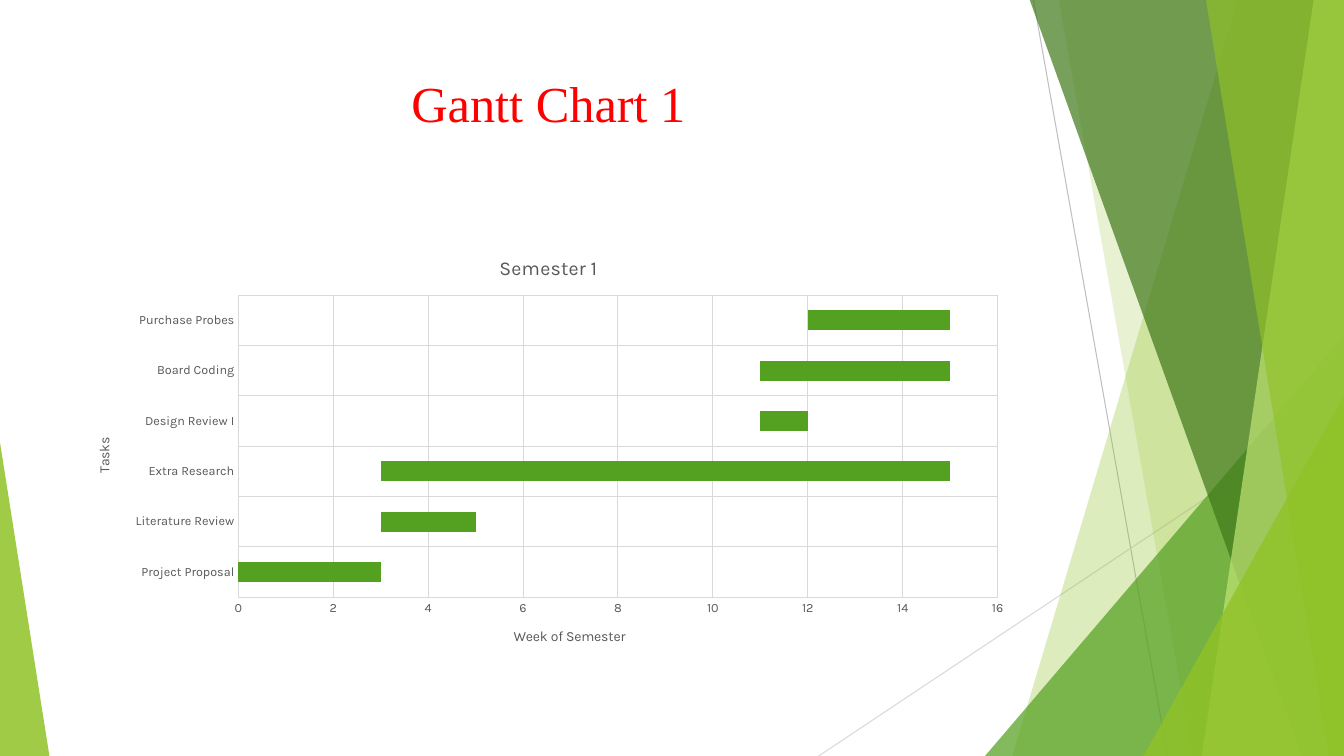
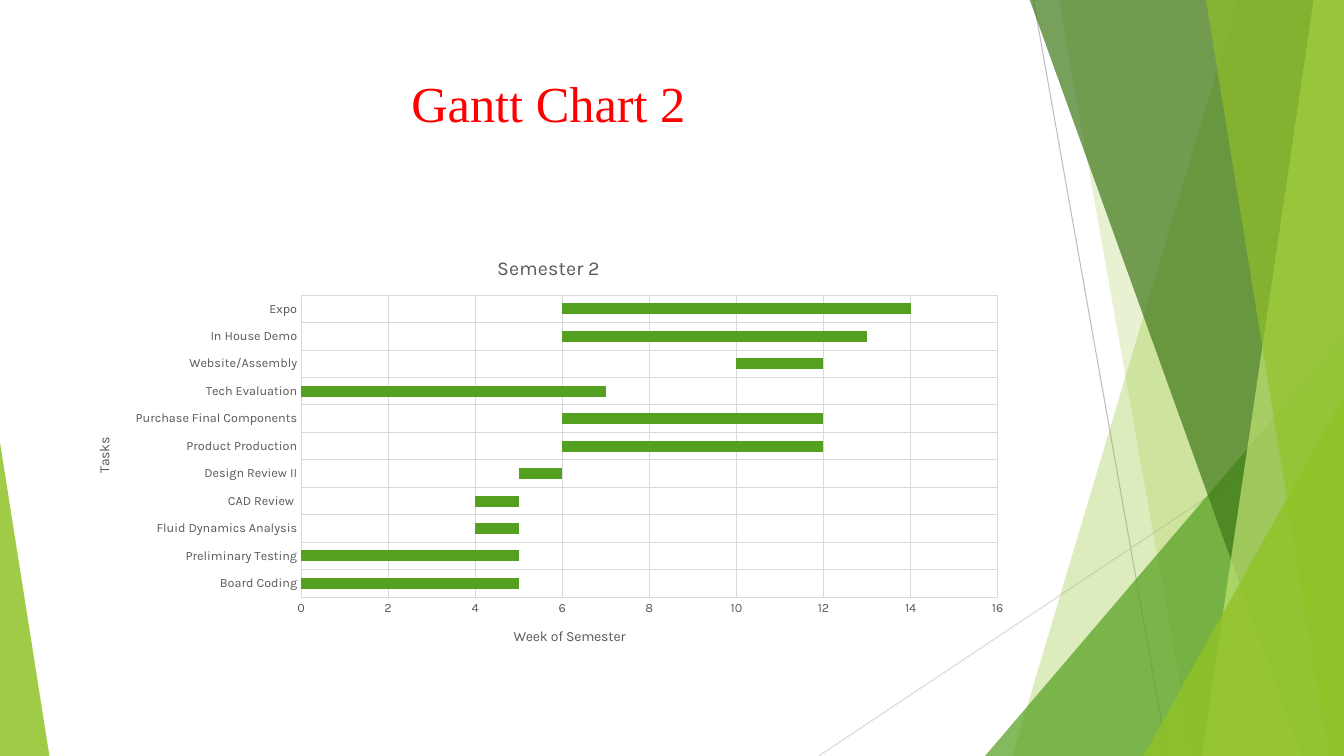
"""Build two Gantt chart slides on a shared faceted green background."""
from dataclasses import dataclass

from lxml import etree
from pptx import Presentation
from pptx import util as u
from pptx.chart.data import CategoryChartData
from pptx.dml.color import RGBColor
from pptx.enum import chart as ce
from pptx.enum import shapes, text
from pptx.oxml.ns import qn


@dataclass(frozen=True)
class Theme:
    """Colours, fonts, sizes and the shared column of the deck."""
    lime: str = "90C226"
    pale: str = "C0E474"
    green: str = "54A021"
    dark: str = "3F7819"
    red: str = "FF0000"
    grey: str = "595959"
    rule: str = "BFBFBF"
    grid: str = "D9D9D9"
    serif: str = "Times New Roman"
    sans: str = "Karla"
    head: float = 36
    title: float = 14
    axis: float = 10
    tick: float = 9
    hair: float = 0.75
    left: float = 0.74
    wide: float = 9.4


T = Theme()
WIDTH, HEIGHT, TOP = 13.33, 7.5, -0.01

WEEKS_1 = [
    ("Project Proposal", 0, 3),
    ("Literature Review", 3, 2),
    ("Extra Research", 3, 12),
    ("Design Review I", 11, 1),
    ("Board Coding", 11, 4),
    ("Purchase Probes", 12, 3),
]
WEEKS_2 = [
    ("Board Coding", 0, 5),
    ("Preliminary Testing", 0, 5),
    ("Fluid Dynamics Analysis", 4, 1),
    ("CAD Review ", 4, 1),
    ("Design Review II", 5, 1),
    ("Product Production", 6, 6),
    ("Purchase Final Components", 6, 6),
    ("Tech Evaluation", 0, 7),
    ("Website/Assembly", 10, 2),
    ("In House Demo", 6, 7),
    ("Expo", 6, 8),
]


def rgb(code):
    """Turn a hex code into a colour."""
    return RGBColor.from_string(code)


def style(font, size, color, name):
    """Set size, colour and face of a font."""
    font.size, font.name, font.bold = u.Pt(size), name, False
    font.color.rgb = rgb(color)


def stroke(line, color):
    """Give a line the thin rule style."""
    line.color.rgb = rgb(color)
    line.width = u.Pt(T.hair)


def tint(shape, color, alpha):
    """Fill a shape with a colour at alpha percent, without outline or shadow."""
    shape.shadow.inherit = False
    shape.line.fill.background()
    shape.fill.solid()
    shape.fill.fore_color.rgb = rgb(color)
    tone = shape.fill._xPr.find(".//" + qn("a:srgbClr"))
    etree.SubElement(tone, qn("a:alpha")).set("val", str(alpha * 1000))


def rule(slide, start, end, color):
    """Draw a thin straight line."""
    ends = [u.Inches(v) for v in start + end]
    line = slide.shapes.add_connector(shapes.MSO_CONNECTOR.STRAIGHT, *ends)
    stroke(line.line, color)
    etree.SubElement(line._element.spPr, qn("a:effectLst"))


def band(slide, top, foot, color, alpha):
    """Draw a slanted band that runs to the right edge."""
    spots = [(top, TOP), (WIDTH, TOP), (WIDTH, HEIGHT), (foot, HEIGHT)]
    spots = [(u.Inches(x), u.Inches(y)) for x, y in spots]
    form = slide.shapes.build_freeform(*spots[0])
    form.add_line_segments(spots[1:], close=True)
    tint(form.convert_to_shape(), color, alpha)


def wedge(slide, left, top, width, peak, color, alpha):
    """Draw a triangle that stands on the bottom edge."""
    box = [u.Inches(v) for v in (left, top, width, HEIGHT - top)]
    shape = slide.shapes.add_shape(
        shapes.MSO_SHAPE.ISOSCELES_TRIANGLE, *box)
    shape.adjustments[0] = peak
    tint(shape, color, alpha)


def facets(slide):
    """Draw the shared background."""
    rule(slide, (10.25, 0), (11.58, HEIGHT), T.rule)
    rule(slide, (WIDTH, 4.03), (8.12, HEIGHT), T.grid)
    band(slide, 12.28, 10.04, T.lime, 30)
    band(slide, 10.5, 11.83, T.lime, 20)
    wedge(slide, 9.77, 3.33, 3.56, 1, T.green, 72)
    band(slide, 10.21, 12.91, T.dark, 70)
    band(slide, 13.03, 11.92, T.pale, 70)
    band(slide, 11.96, 13.18, T.lime, 65)
    wedge(slide, 11.34, 3.93, 1.99, 1, T.lime, 80)
    wedge(slide, 0, 4.39, 0.49, 0, T.lime, 85)


def heading(slide, words):
    """Add the centred slide title."""
    box = [u.Inches(v) for v in (T.left, 0.67, T.wide, 1.44)]
    frame = slide.shapes.add_textbox(*box).text_frame
    frame.word_wrap = True
    frame.vertical_anchor = text.MSO_ANCHOR.TOP
    para = frame.paragraphs[0]
    para.text = words
    para.alignment = text.PP_ALIGN.CENTER
    style(para.font, T.head, T.red, T.serif)


def label(frame, words, size, turn=0):
    """Write a chart or axis title, turned by some degrees."""
    frame.text = words
    style(frame.paragraphs[0].font, size, T.grey, T.sans)
    frame._txBody.bodyPr.set("rot", str(turn * 60000))


def scale(axis, words, turn=0):
    """Style an axis with its title and grid."""
    axis.has_major_gridlines = True
    stroke(axis.major_gridlines.format.line, T.grid)
    axis.major_tick_mark = axis.minor_tick_mark = ce.XL_TICK_MARK.NONE
    style(axis.tick_labels.font, T.tick, T.grey, T.sans)
    label(axis.axis_title.text_frame, words, T.axis, turn)


def gantt(slide, words, tasks):
    """Add a stacked bar chart whose first series is an unseen offset."""
    names, starts, spans = zip(*tasks)
    data = CategoryChartData()
    data.categories = names
    data.add_series("Series 1", starts)
    data.add_series("Series 2", spans)
    box = [u.Inches(v) for v in (T.left, 2.36, T.wide, 4.24)]
    chart = slide.shapes.add_chart(
        ce.XL_CHART_TYPE.BAR_STACKED, *box, data).chart
    style(chart.font, T.axis, T.grey, T.sans)
    chart.has_legend = False
    chart.has_title = True
    label(chart.chart_title.text_frame, words, T.title)
    plot = chart.plots[0]
    plot.gap_width, plot.overlap = 150, 100
    plot.vary_by_categories = False
    wait, work = plot.series
    wait.format.fill.background()
    work.format.fill.solid()
    work.format.fill.fore_color.rgb = rgb(T.green)
    for row in plot.series:
        row.invert_if_negative = False
        row.format.line.fill.background()
    scale(chart.category_axis, "Tasks", -90)
    stroke(chart.category_axis.format.line, T.grid)
    weeks = chart.value_axis
    scale(weeks, "Week of Semester")
    weeks.format.line.fill.background()
    weeks.minimum_scale, weeks.maximum_scale, weeks.major_unit = 0, 16, 2


def main():
    """Build and save the deck."""
    deck = Presentation()
    deck.slide_width, deck.slide_height = u.Inches(WIDTH), u.Inches(HEIGHT)
    for count, tasks in enumerate((WEEKS_1, WEEKS_2), 1):
        slide = deck.slides.add_slide(deck.slide_layouts[6])
        facets(slide)
        heading(slide, f"Gantt Chart {count}")
        gantt(slide, f"Semester {count}", tasks)
    deck.save("out.pptx")


if __name__ == "__main__":
    main()
